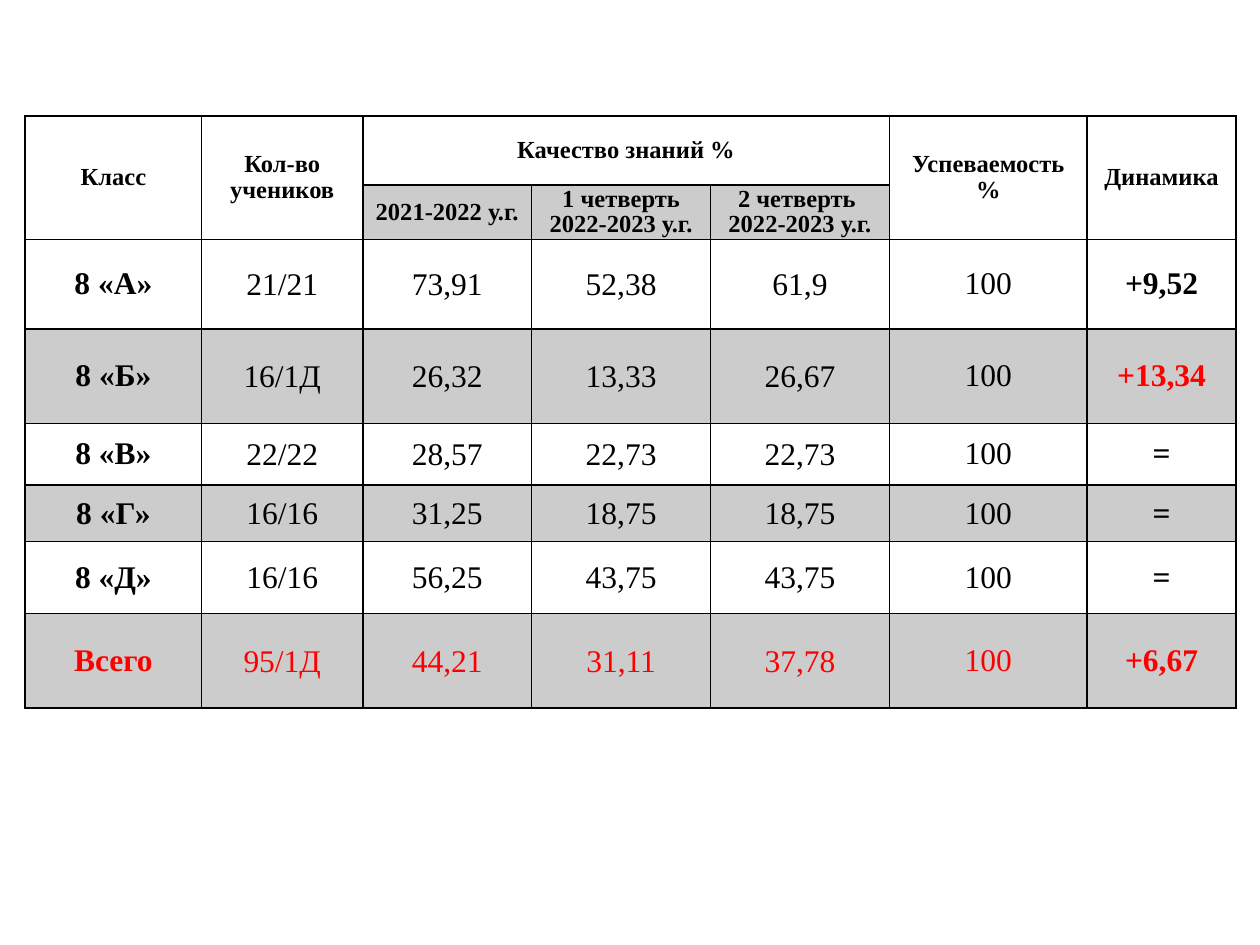
import copy
import dataclasses

import lxml.etree
import pptx
import pptx.dml.color
import pptx.enum.text
import pptx.oxml.ns
import pptx.util

Inches = pptx.util.Inches
qn = pptx.oxml.ns.qn


@dataclasses.dataclass
class Theme:
    font: str = "Times New Roman"
    ink: str = "000000"
    red: str = "FF0000"
    head: int = 14
    body: int = 18
    band: int = 20
    rule: int = 1
    pitch: float = 0.95


def write(frame, text, font, size, color, bold=False, pitch=1.0):
    para = frame.paragraphs[0]
    para.alignment = pptx.enum.text.PP_ALIGN.CENTER
    para.line_spacing = pitch
    para.text = text
    for run in para.runs:
        run.font.name = font
        run.font.size = pptx.util.Pt(size)
        run.font.bold = bold
        run.font.color.rgb = pptx.dml.color.RGBColor.from_string(color)
    for gap in para._p.findall(qn("a:br")):
        gap.insert(0, copy.deepcopy(para.runs[0]._r.rPr))


class Deck:
    def __init__(self, theme):
        self.theme = theme
        self.show = pptx.Presentation()
        self.show.slide_width = Inches(10)
        self.show.slide_height = Inches(7.5)
        self.slide = self.show.slides.add_slide(self.show.slide_layouts[6])

    def grid(self, left, top, cols, rows):
        shape = self.slide.shapes.add_table(
            len(rows), len(cols), Inches(left), Inches(top),
            Inches(sum(cols)), Inches(sum(rows)))
        table = shape.table
        table.first_row = False
        table.horz_banding = False
        for col, width in zip(table.columns, cols):
            col.width = Inches(width)
        for row, height in zip(table.rows, rows):
            row.height = Inches(height)
        return table

    def cell(self, cell, text, wide, shade, **style):
        cell.margin_left = cell.margin_right = Inches(0.07 if wide else 0.01)
        cell.margin_top = Inches(0 if wide else 0.01)
        cell.margin_bottom = 0
        cell.vertical_anchor = pptx.enum.text.MSO_ANCHOR.MIDDLE
        self.fill(cell, shade)
        self.edge(cell)
        if text:
            write(cell.text_frame, text, self.theme.font, **style)

    def fill(self, cell, shade):
        if not shade:
            cell.fill.background()
            return
        cell.fill.solid()
        cell.fill.fore_color.rgb = pptx.dml.color.RGBColor.from_string(self.theme.ink)
        tone = cell._tc.tcPr.find(".//" + qn("a:srgbClr"))
        lxml.etree.SubElement(tone, qn("a:alpha"), val=str(self.theme.band * 1000))

    def edge(self, cell):
        width = str(pptx.util.Pt(self.theme.rule))
        for spot, side in enumerate(("L", "R", "T", "B")):
            line = lxml.etree.Element(qn("a:ln" + side), w=width)
            solid = lxml.etree.SubElement(line, qn("a:solidFill"))
            lxml.etree.SubElement(solid, qn("a:srgbClr"), val=self.theme.ink)
            cell._tc.tcPr.insert(spot, line)


HEAD = [
    ["Класс", "Кол-во учеников", "Качество знаний %", "", "", "Успеваемость %", "Динамика"],
    ["", "", "2021-2022 у.г.", "1 четверть\v2022-2023 у.г.",
     "2 четверть \v2022-2023 у.г.", "", ""],
]
BODY = [
    ["8 «А»", "21/21", "73,91", "52,38", "61,9", "100", "+9,52"],
    ["8 «Б»", "16/1Д", "26,32", "13,33", "26,67", "100", "+13,34"],
    ["8 «В»", "22/22", "28,57", "22,73", "22,73", "100", "="],
    ["8 «Г»", "16/16", "31,25", "18,75", "18,75", "100", "="],
    ["8 «Д»", "16/16", "56,25", "43,75", "43,75", "100", "="],
    ["Всего", "95/1Д", "44,21", "31,11", "37,78", "100", "+6,67"],
]
COLS = [1.4, 1.28, 1.34, 1.42, 1.42, 1.57, 1.18]
ROWS = [0.55, 0.43, 0.71, 0.75, 0.49, 0.45, 0.57, 0.75]


def main():
    theme = Theme()
    deck = Deck(theme)
    table = deck.grid(0.2, 0.92, COLS, ROWS)
    for col in (0, 1, 5, 6):
        table.cell(0, col).merge(table.cell(1, col))
    table.cell(0, 2).merge(table.cell(0, 4))

    for row, texts in enumerate(HEAD):
        for col, text in enumerate(texts):
            deck.cell(table.cell(row, col), text, True, row == 1 and bool(text),
                      size=theme.head, color=theme.ink, bold=True, pitch=theme.pitch)

    for row, texts in enumerate(BODY):
        for col, text in enumerate(texts):
            hot = texts[0] == "Всего" or text == "+13,34"
            deck.cell(table.cell(row + len(HEAD), col), text, col in (0, 5, 6),
                      row % 2 == 1, size=theme.body,
                      color=theme.red if hot else theme.ink, bold=col in (0, 6))

    deck.show.save("out.pptx")


if __name__ == "__main__":
    main()
